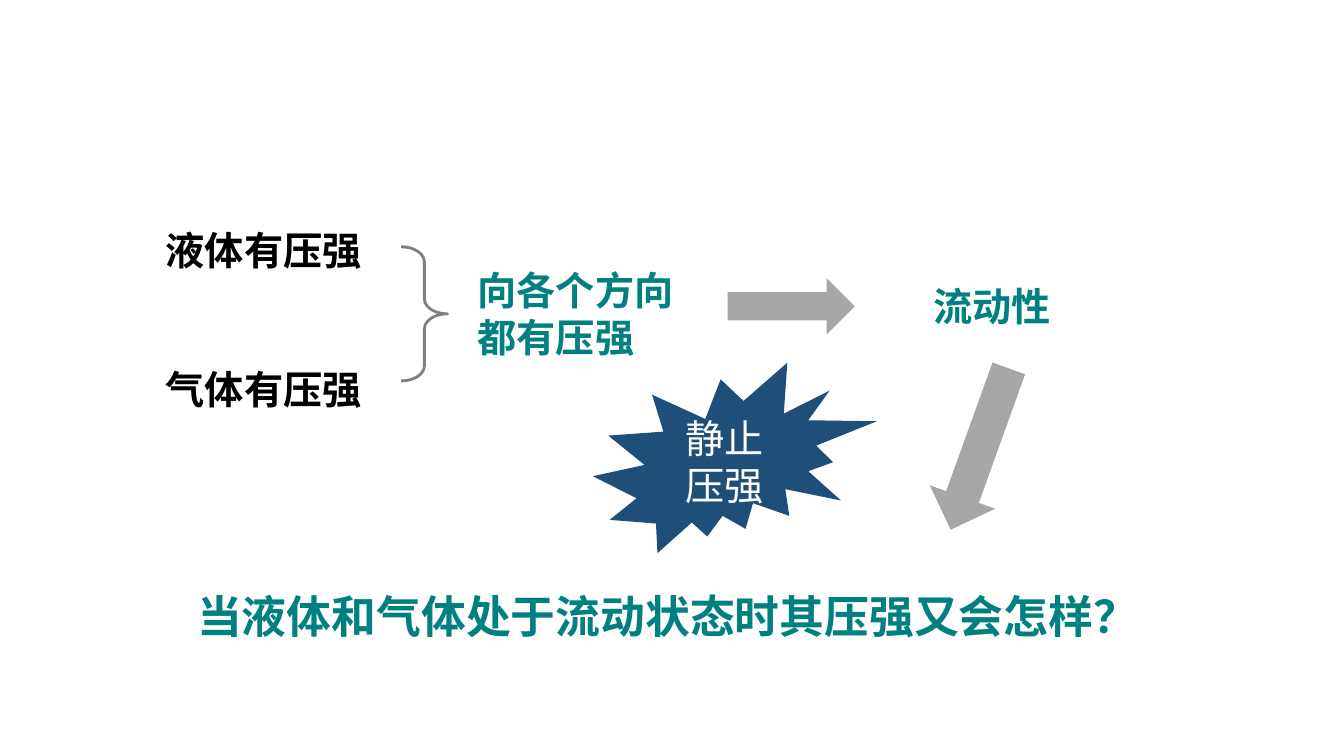
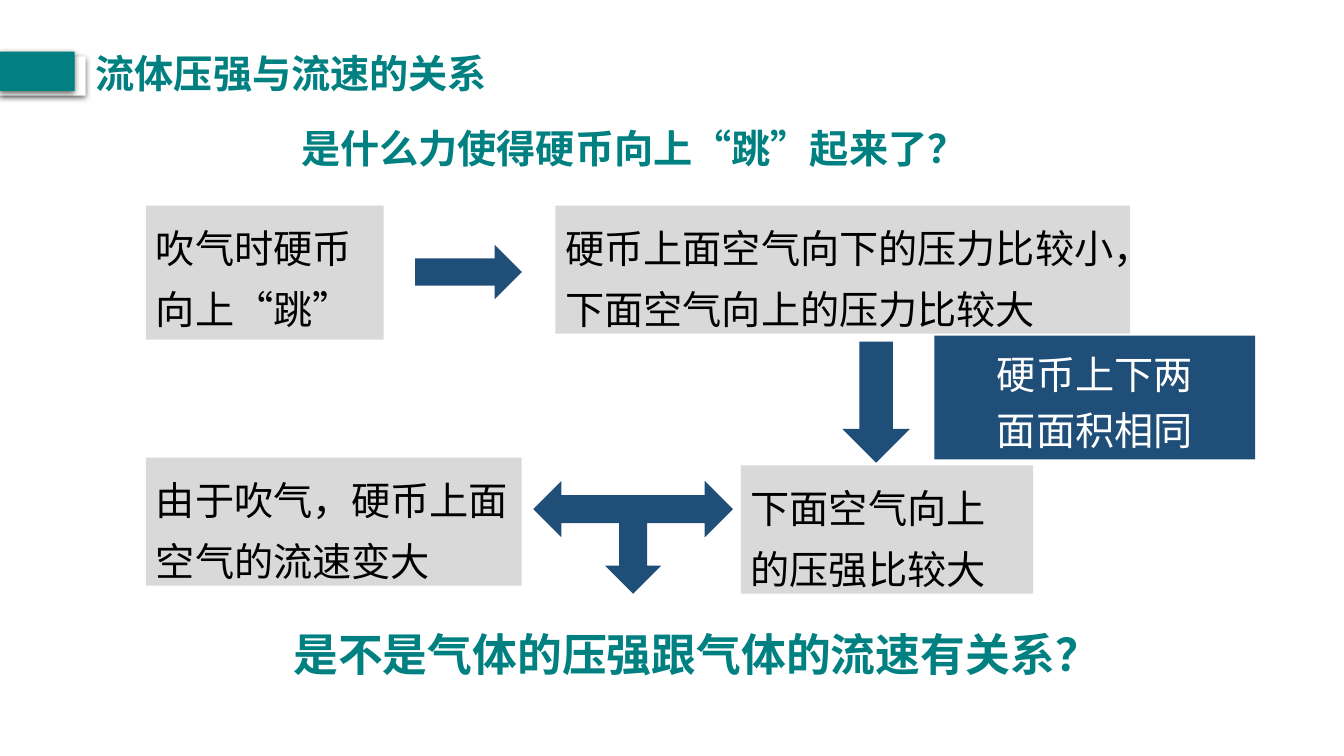
from dataclasses import dataclass
from typing import Optional

import pptx
import pptx.dml.color
import pptx.enum.shapes
import pptx.enum.text
import pptx.oxml
import pptx.oxml.ns
import pptx.util

Cm = pptx.util.Cm
Pt = pptx.util.Pt
RGBColor = pptx.dml.color.RGBColor
Kind = pptx.enum.shapes.MSO_SHAPE
Align = pptx.enum.text.PP_ALIGN
Anchor = pptx.enum.text.MSO_ANCHOR

FONT = "Noto Sans CJK SC"
TEAL = RGBColor(0x00, 0x80, 0x80)
NAVY = RGBColor(0x1F, 0x4E, 0x79)
BLACK = RGBColor(0x00, 0x00, 0x00)
WHITE = RGBColor(0xFF, 0xFF, 0xFF)
GREY = RGBColor(0x80, 0x80, 0x80)
ARROW_GREY = RGBColor(0xA6, 0xA6, 0xA6)
BOX_GREY = RGBColor(0xD9, 0xD9, 0xD9)


@dataclass(frozen=True)
class Area:
    """A place on the slide, in centimetres."""
    left: float
    top: float
    width: float
    height: float

    def lengths(self) -> list:
        return [Cm(v) for v in (self.left, self.top, self.width, self.height)]


@dataclass(frozen=True)
class Style:
    color: RGBColor
    size: int = 28
    bold: bool = False
    spacing: float = 1.0
    align: Align = Align.LEFT
    anchor: Anchor = Anchor.TOP


@dataclass(frozen=True)
class Label:
    area: Area
    text: str
    style: Style


@dataclass(frozen=True)
class Block:
    kind: Kind
    area: Area
    fill: RGBColor
    text: str = ""
    style: Optional[Style] = None
    rotation: float = 0


HEADING = Style(TEAL, bold=True)
QUESTION = Style(TEAL, size=32, bold=True)
FACT = Style(BLACK, bold=True, spacing=1.2, anchor=Anchor.MIDDLE)
STEP = Style(BLACK, spacing=1.3)
NOTE = Style(WHITE, spacing=1.2, align=Align.CENTER)
BURST = Style(WHITE, align=Align.CENTER, anchor=Anchor.MIDDLE)


def write(s, text: str, style: Style) -> None:
    """Fill a shape with text, one paragraph for each line."""
    tf = s.text_frame
    tf.word_wrap = True
    tf.vertical_anchor = style.anchor
    tf.text = text
    for p in tf.paragraphs:
        p.alignment = style.align
        p.line_spacing = style.spacing
        p.font.name = FONT
        p.font.size = Pt(style.size)
        p.font.bold = style.bold
        p.font.color.rgb = style.color
        latin = p.font._element.find(pptx.oxml.ns.qn("a:latin"))
        latin.addnext(pptx.oxml.parse_xml(
            f'<a:ea {pptx.oxml.ns.nsdecls("a")} typeface="{FONT}"/>'))


def add_label(slide, label: Label) -> None:
    write(slide.shapes.add_textbox(*label.area.lengths()), label.text, label.style)


def add_block(slide, block: Block):
    s = slide.shapes.add_shape(block.kind, *block.area.lengths())
    s.shadow.inherit = False
    s.fill.solid()
    s.fill.fore_color.rgb = block.fill
    s.line.fill.background()
    s.rotation = block.rotation
    if block.style:
        write(s, block.text, block.style)
    return s


def add_brace(slide, area: Area) -> None:
    s = slide.shapes.add_shape(Kind.RIGHT_BRACE, *area.lengths())
    s.shadow.inherit = False
    s.adjustments[0] = 0.32
    s.fill.background()
    s.line.color.rgb = GREY
    s.line.width = Pt(2)


def add_drop_shadow(s) -> None:
    effects = s._element.spPr.find(pptx.oxml.ns.qn("a:effectLst"))
    effects.append(pptx.oxml.parse_xml(
        f'<a:outerShdw {pptx.oxml.ns.nsdecls("a")} blurRad="{Pt(4.5)}" '
        f'dist="{Pt(1.5)}" dir="5400000" algn="t" rotWithShape="0">'
        '<a:srgbClr val="000000"><a:alpha val="63000"/></a:srgbClr>'
        '</a:outerShdw>'))


def add_title(slide, text: str) -> None:
    """Draw the heading with its shadowed double tab at the left edge."""
    for area, fill in ((Area(0, 1.42, 2.16, 0.99), WHITE),
                       (Area(0, 1.3, 1.88, 0.99), TEAL)):
        add_drop_shadow(add_block(slide, Block(Kind.RECTANGLE, area, fill)))
    add_label(slide, Label(Area(2.16, 1.12, 11.38, 1.45), text, HEADING))


def add_content(slide, blocks: list[Block], labels: list[Label]) -> None:
    for block in blocks:
        add_block(slide, block)
    for label in labels:
        add_label(slide, label)


def step(area: Area, text: str) -> Block:
    return Block(Kind.RECTANGLE, area, BOX_GREY, text, STEP)


def build_still_pressure(slide) -> None:
    add_brace(slide, Area(10.11, 6.22, 1.17, 3.38))
    blocks = [
        Block(Kind.RIGHT_ARROW, Area(18.34, 7.01, 3.2, 1.42), ARROW_GREY),
        Block(Kind.EXPLOSION2, Area(14.94, 9.14, 7.16, 4.8), NAVY,
              "静止压强", BURST),
        Block(Kind.RIGHT_ARROW, Area(22.53, 10.44, 4.32, 1.75), ARROW_GREY,
              rotation=109.8),
    ]
    labels = [
        Label(Area(3.93, 5.38, 6.12, 1.57), "液体有压强", FACT),
        Label(Area(3.93, 8.89, 6.12, 1.57), "气体有压强", FACT),
        Label(Area(11.79, 6.58, 5.74, 2.64), "向各个方向都有压强", HEADING),
        Label(Area(23.27, 6.99, 3.81, 1.45), "流动性", HEADING),
        Label(Area(4.72, 14.71, 23.14, 1.63),
              "当液体和气体处于流动状态时其压强又会怎样？", QUESTION),
    ]
    add_content(slide, blocks, labels)


def build_flow_speed(slide) -> None:
    add_title(slide, "流体压强与流速的关系")
    blocks = [
        step(Area(3.68, 5.18, 5.99, 3.38), "吹气时硬币向上“跳”"),
        step(Area(14, 5.18, 14.48, 3.23),
             "硬币上面空气向下的压力比较小，下面空气向上的压力比较大"),
        step(Area(18.67, 11.73, 7.37, 3.23), "下面空气向上的压强比较大"),
        step(Area(3.68, 11.53, 9.47, 3.23), "由于吹气，硬币上面空气的流速变大"),
        Block(Kind.RECTANGLE, Area(23.55, 8.46, 8.08, 3.12), NAVY,
              "硬币上下两\n面面积相同", NOTE),
        Block(Kind.RIGHT_ARROW, Area(10.46, 6.17, 2.69, 1.37), NAVY),
        Block(Kind.DOWN_ARROW, Area(21.23, 8.61, 1.7, 3.05), NAVY),
        Block(Kind.LEFT_RIGHT_UP_ARROW, Area(13.44, 12.12, 5.03, 2.84), NAVY,
              rotation=180),
    ]
    labels = [
        Label(Area(7.34, 3.02, 19.76, 1.45),
              "是什么力使得硬币向上“跳”起来了？", HEADING),
        Label(Area(7.14, 15.67, 21.13, 1.63),
              "是不是气体的压强跟气体的流速有关系？", QUESTION),
    ]
    add_content(slide, blocks, labels)


def main() -> None:
    prs = pptx.Presentation()
    prs.slide_width, prs.slide_height = Cm(33.87), Cm(19.05)
    for build in (build_still_pressure, build_flow_speed):
        build(prs.slides.add_slide(prs.slide_layouts[6]))
    prs.save("out.pptx")


if __name__ == "__main__":
    main()
